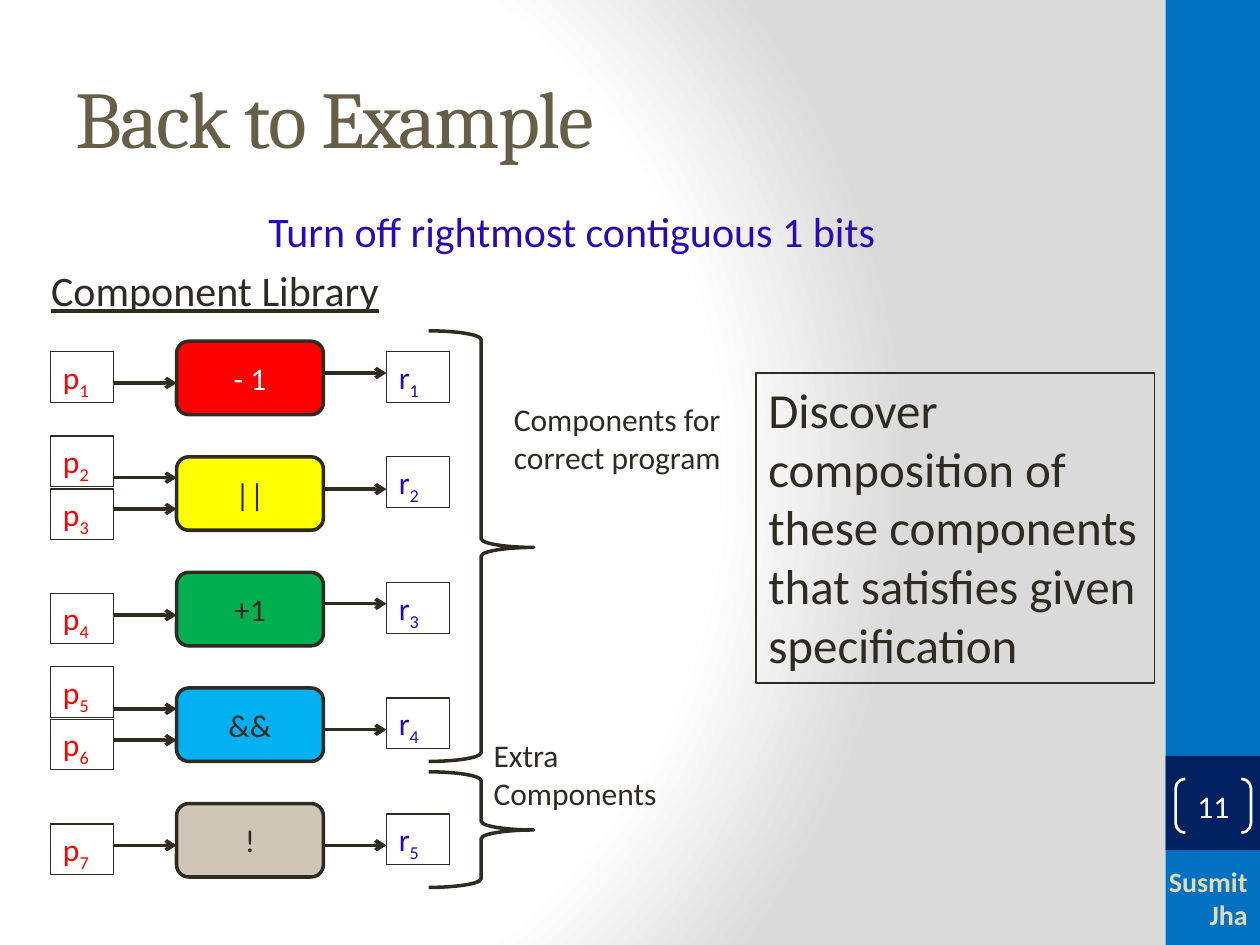
import pptx
import pptx.dml.color
import pptx.enum.shapes
import pptx.enum.text
import pptx.oxml.ns
import pptx.util
from lxml import etree

Cm = pptx.util.Cm
Pt = pptx.util.Pt
qn = pptx.oxml.ns.qn
SHAPE = pptx.enum.shapes.MSO_SHAPE
ALIGN = pptx.enum.text.PP_ALIGN
ANCHOR = pptx.enum.text.MSO_ANCHOR
FIT = pptx.enum.text.MSO_AUTO_SIZE

INK, RED, VIOLET, WHITE = "2F2B20", "FF0000", "2A08B8", "FFFFFF"


def color(value):
    return pptx.dml.color.RGBColor.from_string(value)


class Page:
    font = "Calibri"
    size = 18

    def __init__(self, prs):
        self.s = prs.slides.add_slide(prs.slide_layouts[6])

    def background(self, stops, center):
        self.s.background.fill.gradient()
        grad = self.s.element.find(".//" + qn("a:gradFill"))
        grad.clear()
        grad.set("rotWithShape", "1")
        stop_list = etree.SubElement(grad, qn("a:gsLst"))
        for pos, value in stops:
            gs = etree.SubElement(stop_list, qn("a:gs"), pos=str(pos * 1000))
            etree.SubElement(gs, qn("a:srgbClr"), val=value)
        circle = etree.SubElement(grad, qn("a:path"), {"path": "circle"})
        rect = {side: str(n * 1000) for side, n in zip("ltrb", center)}
        etree.SubElement(circle, qn("a:fillToRect"), rect)

    def shape(self, kind, x, y, w, h, fill=None, line=None, width=2, adj=()):
        sp = self.s.shapes.add_shape(kind, Cm(x), Cm(y), Cm(w), Cm(h))
        sp.shadow.inherit = False
        if fill:
            sp.fill.solid()
            sp.fill.fore_color.rgb = color(fill)
        else:
            sp.fill.background()
        if line:
            sp.line.color.rgb = color(line)
            sp.line.width = Pt(width)
        else:
            sp.line.fill.background()
        for i, value in enumerate(adj):
            sp.adjustments[i] = value
        return sp

    def textbox(self, x, y, w, h):
        return self.s.shapes.add_textbox(Cm(x), Cm(y), Cm(w), Cm(h))

    def frame(self, sp, anchor=ANCHOR.TOP, grow=False):
        tf = sp.text_frame
        tf.word_wrap = True
        tf.vertical_anchor = anchor
        tf.auto_size = FIT.SHAPE_TO_FIT_TEXT if grow else FIT.NONE
        return tf

    def paragraph(self, tf, align=ALIGN.LEFT):
        p = tf.paragraphs[0]
        if p.runs:
            p = tf.add_paragraph()
        p.alignment = align
        return p

    def run(self, p, text, value=INK, size=None, font=None):
        r = p.add_run()
        r.text = text
        r.font.name = font or self.font
        r.font.size = Pt(size or self.size)
        r.font.color.rgb = color(value)
        return r

    def centered(self, sp, text, value):
        tf = self.frame(sp, ANCHOR.MIDDLE)
        self.run(self.paragraph(tf, ALIGN.CENTER), text, value)
        return tf

    def port(self, x, y, letter, number, value):
        sp = self.shape(SHAPE.RECTANGLE, x, y, 1.27, 1.02, line=INK, width=0.75)
        p = self.paragraph(self.frame(sp, grow=True))
        self.run(p, letter, value)
        r = self.run(p, str(number), value)
        r.font._element.set("baseline", "-25000")

    def arrow(self, x1, x2, y):
        c = self.s.shapes.add_connector(
            pptx.enum.shapes.MSO_CONNECTOR.STRAIGHT, Cm(x1), Cm(y), Cm(x2), Cm(y))
        c.line.color.rgb = color(INK)
        c.line.width = Pt(2)
        etree.SubElement(c.line._get_or_add_ln(), qn("a:tailEnd"), type="arrow")
        etree.SubElement(c._element.spPr, qn("a:effectLst"))

    def brace(self, y, h):
        self.shape(SHAPE.RIGHT_BRACE, 8.64, y, 2.12, h, line=INK, adj=(0.083, 0.503))

    def label(self, x, y, text):
        tf = self.frame(self.textbox(x, y, 4.88, 1.8), grow=True)
        self.run(self.paragraph(tf), text)


def main():
    prs = pptx.Presentation()
    prs.slide_width, prs.slide_height = Cm(25.4), Cm(19.05)
    page = Page(prs)
    page.background([(0, WHITE), (75, WHITE), (100, "DADADA")], (20, 50, 100, 50))
    page.shape(SHAPE.RECTANGLE, 23.5, 0, 1.9, 19.05, "0070C0")
    page.shape(SHAPE.RECTANGLE, 23.5, 15.24, 1.9, 1.9, "002060")

    tf = page.frame(page.textbox(1.27, 0.76, 21.16, 3.18), ANCHOR.MIDDLE)
    r = page.run(page.paragraph(tf), "Back to Example", "675E47", 46, "Cambria")
    r.font._element.set("spc", "-100")

    tf = page.frame(page.textbox(0.48, 4.02, 21.8, 13.76))
    headings = [
        ("Turn off rightmost contiguous 1 bits", VIOLET, ALIGN.CENTER, False),
        ("Component Library", INK, ALIGN.LEFT, True),
    ]
    for text, value, align, underline in headings:
        p = page.paragraph(tf, align)
        p.space_before = Pt(4.8)
        p._p.get_or_add_pPr().set("marL", str(Cm(0.3)))
        page.run(p, text, value, 24).font.underline = underline

    components = [
        ("- 1", RED, WHITE, [(7.09, 7.72)], (7.09, 7.52)),
        ("||", "FFFF00", INK, [(8.79, 9.63), (9.86, 10.26)], (9.21, 9.86)),
        ("+1", "00B050", INK, [(11.96, 12.4)], (11.75, 12.17)),
        ("&&", "00B0F0", INK, [(13.44, 14.29), (14.5, 14.92)], (14.07, 14.71)),
        ("!", "D0C6B8", INK, [(16.61, 17.04)], (16.41, 17.04)),
    ]
    param = 0
    for i, (text, fill, value, inputs, output) in enumerate(components):
        sp = page.shape(SHAPE.ROUNDED_RECTANGLE, 3.56, 6.88 + 2.33 * i,
                        2.96, 1.48, fill, INK)
        page.centered(sp, text, value)
        for top, y in inputs:
            param += 1
            page.port(1.02, top, "p", param, RED)
            page.arrow(2.29, 3.56, y)
        top, y = output
        page.port(7.79, top, "r", i + 1, VIOLET)
        page.arrow(6.52, 7.79, y)

    page.brace(6.67, 8.68)
    page.brace(15.56, 2.33)
    page.label(10.11, 7.94, "Components for correct program")
    page.label(9.7, 14.71, "Extra Components")

    sp = page.shape(SHAPE.RECTANGLE, 15.24, 7.52, 8.04, 6.25, line=INK, width=0.75)
    tf = page.frame(sp, grow=True)
    for text in ("Discover composition of these components that satisfies given",
                 "specification"):
        page.run(page.paragraph(tf), text, size=28)

    tf = page.frame(page.textbox(22.43, 17.15, 2.97, 1.9), ANCHOR.MIDDLE)
    r = page.run(page.paragraph(tf, ALIGN.RIGHT), "Susmit Jha", "DFDCB7", 16)
    r.font.bold = True

    sp = page.shape(SHAPE.DOUBLE_BRACKET, 23.7, 15.7, 1.52, 1.09,
                    line=WHITE, width=1.5, adj=(0.179,))
    tf = page.centered(sp, "11", WHITE)
    tf.margin_left = tf.margin_right = tf.margin_top = tf.margin_bottom = 0

    prs.save("out.pptx")


if __name__ == "__main__":
    main()
